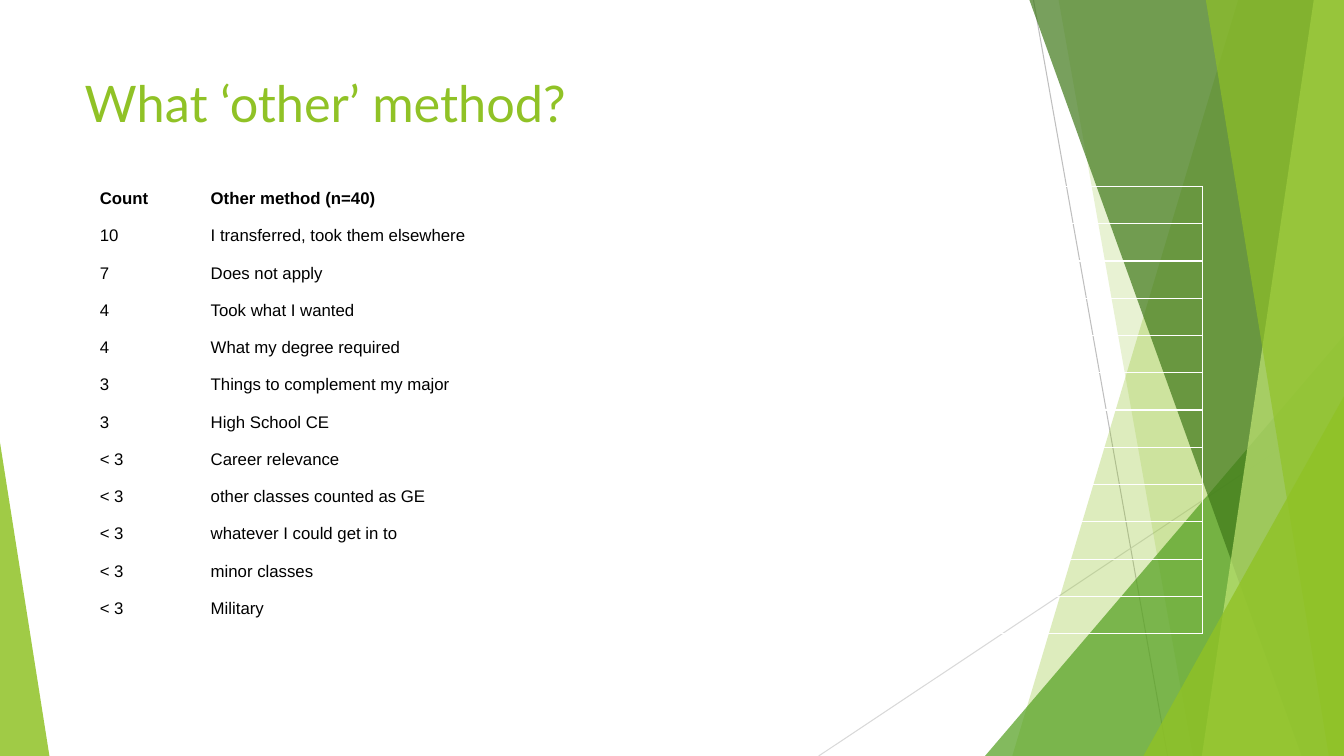
from lxml import etree
from pptx import Presentation, util as u
from pptx.dml.color import RGBColor
from pptx.enum import shapes, text
from pptx.oxml import ns

W, H = 13.33, 7.5
TEXT_LEFT = 0.74
ROW_H = 0.37
COLS = (1.1, 9.91)
GREEN = "90C226"

METHODS = [
    ("Count", "Other method (n=40)"),
    ("10", "I transferred, took them elsewhere"),
    ("7", "Does not apply"),
    ("4", "Took what I wanted"),
    ("4", "What my degree required"),
    ("3", "Things to complement my major"),
    ("3", "High School CE"),
    ("< 3", "Career relevance"),
    ("< 3", "other classes counted as GE"),
    ("< 3", "whatever I could get in to"),
    ("< 3", "minor classes"),
    ("< 3", "Military"),
]


def rgb(value):
    return RGBColor.from_string(value)


def set_font(r, color, **values):
    for name, value in values.items():
        setattr(r.font, name, value)
    r.font.color.rgb = rgb(color)


def paint(s, color, opacity):
    """Fill a shape with a see-through colour, without outline or shadow."""
    s.shadow.inherit = False
    s.line.fill.background()
    s.fill.solid()
    s.fill.fore_color.rgb = rgb(color)
    clr = s.element.spPr.find(ns.qn("a:solidFill"))[0]
    etree.SubElement(clr, ns.qn("a:alpha"), val=str(opacity * 1000))


def add_hairline(slide, start, end, color):
    points = [u.Inches(v) for v in (*start, *end)]
    s = slide.shapes.add_connector(shapes.MSO_CONNECTOR.STRAIGHT, *points)
    s.line.color.rgb = rgb(color)
    s.line.width = u.Pt(0.75)
    etree.SubElement(s.element.spPr, ns.qn("a:effectLst"))


def add_facet(slide, top_x, bottom_x, color, opacity):
    """Full-height band from a slanted left side to the right slide edge."""
    builder = slide.shapes.build_freeform(
        u.Inches(top_x), 0, scale=1.0)
    corners = [(W, 0), (W, H), (bottom_x, H)]
    builder.add_line_segments([(u.Inches(x), u.Inches(y)) for x, y in corners])
    paint(builder.convert_to_shape(), color, opacity)


def add_corner(slide, left, width, height, peak, color, opacity):
    """Triangle standing on the bottom edge; peak is 0 (left) or 1 (right)."""
    box = [u.Inches(v) for v in (left, H - height, width, height)]
    s = slide.shapes.add_shape(shapes.MSO_SHAPE.ISOSCELES_TRIANGLE, *box)
    s.adjustments[0] = peak
    paint(s, color, opacity)


def add_backdrop(slide):
    add_hairline(slide, (10.25, 0), (11.58, H), "BFBFBF")
    add_hairline(slide, (W, 4.03), (8.12, H), "D9D9D9")
    add_facet(slide, 12.28, 10.04, GREEN, 30)
    add_facet(slide, 10.5, 11.83, GREEN, 20)
    add_corner(slide, 9.77, 3.56, 4.17, 1, "54A021", 72)
    add_facet(slide, 10.21, 12.91, "3F7819", 70)
    add_facet(slide, 13.03, 11.92, "C0E474", 70)
    add_facet(slide, 11.96, 13.18, GREEN, 65)
    add_corner(slide, 11.34, 1.99, 3.57, 1, GREEN, 80)
    add_corner(slide, 0, 0.49, 3.11, 0, GREEN, 85)


def set_title(slide, words):
    s = slide.shapes.title
    box = dict(left=TEXT_LEFT, top=0.67, width=9.4, height=1.44)
    for name, value in box.items():
        setattr(s, name, u.Inches(value))
    tf = s.text_frame
    tf.word_wrap = True
    tf.auto_size = text.MSO_AUTO_SIZE.NONE
    tf.vertical_anchor = text.MSO_ANCHOR.TOP
    p = tf.paragraphs[0]
    p.alignment = text.PP_ALIGN.LEFT
    p.line_spacing = 1.0
    r = p.add_run()
    r.text = words
    set_font(r, GREEN, name="Lato", size=u.Pt(36))
    s.element.getparent().append(s.element)


def fill_cell(cell, words, bold):
    margins = dict(left=0.07, right=0.07, top=0, bottom=0)
    for side, value in margins.items():
        setattr(cell, f"margin_{side}", u.Inches(value))
    cell.fill.background()
    cell.vertical_anchor = text.MSO_ANCHOR.TOP
    p = cell.text_frame.paragraphs[0]
    p.line_spacing = 1.15
    r = p.add_run()
    r.text = words
    set_font(r, "000000", name="Arial", size=u.Pt(12), bold=bold)


def add_methods_table(slide):
    box = [u.Inches(v) for v in (0.92, 1.85, sum(COLS), ROW_H * len(METHODS))]
    table = slide.shapes.add_table(len(METHODS), len(COLS), *box).table
    table.first_row = table.horz_banding = False
    for column, width in zip(table.columns, COLS):
        column.width = u.Inches(width)
    for i, row in enumerate(METHODS):
        for j, words in enumerate(row):
            fill_cell(table.cell(i, j), words, bold=i == 0)


def main():
    prs = Presentation()
    prs.slide_width, prs.slide_height = u.Inches(W), u.Inches(H)
    slide = prs.slides.add_slide(prs.slide_layouts.get_by_name("Title Only"))
    add_backdrop(slide)
    set_title(slide, "What ‘other’ method?")
    add_methods_table(slide)
    prs.save("out.pptx")


if __name__ == "__main__":
    main()
